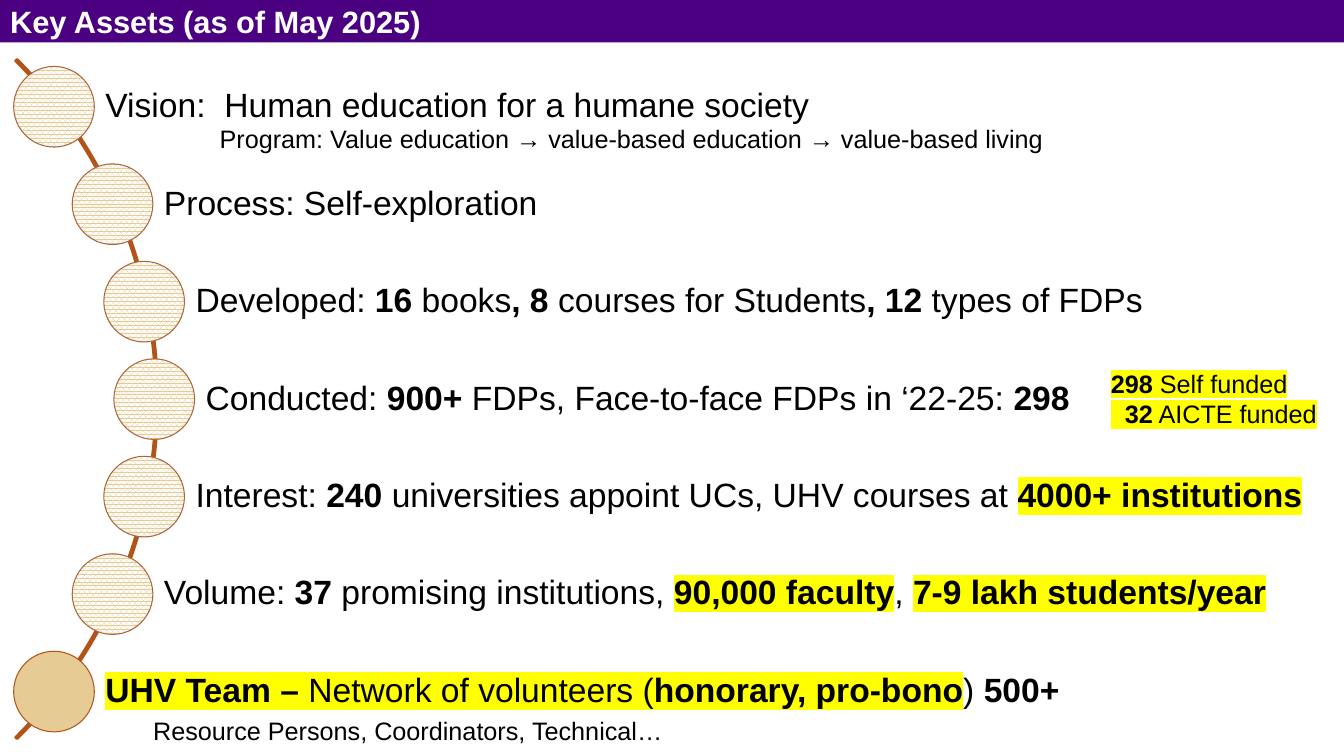
from math import sqrt

from lxml.etree import Element
from pptx import Presentation
from pptx.dml.color import RGBColor
from pptx.enum.dml import MSO_PATTERN
from pptx.enum.shapes import MSO_SHAPE
from pptx.enum.text import MSO_ANCHOR, MSO_AUTO_SIZE, PP_ALIGN
from pptx.oxml.ns import qn
from pptx.util import Inches, Pt

INDIGO, WHITE, BLACK = "4B0082", "FFFFFF", "000000"
RUST, BROWN, SAND, YELLOW = "B2541A", "AB6539", "E6CB94", "FFFF00"

# Arc geometry, in inches
ARC_SIZE, ARC_X, ARC_Y = 9.53, -3.2, 3.96
CENTER_RADIUS = 4.73
ROW_PITCH = 0.967
CIRCLE_SIZE = 0.8
ROW_HEIGHT, ROW_RIGHT = 0.64, 13.27

# Each run is (text, style): "b" is bold, "h" is highlighted
ASSETS = [
    [("Vision:  Human education for a humane society", "")],
    [("Process: Self-exploration", "")],
    [("Developed: ", ""), ("16 ", "b"), ("books", ""), (", 8 ", "b"),
     ("courses for Students", ""), (", 12 ", "b"), ("types of FDPs", "")],
    [("Conducted: ", ""), ("900+", "b"),
     (" FDPs, Face-to-face FDPs in ‘22-25: ", ""), ("298", "b")],
    [("Interest: ", ""), ("240 ", "b"),
     ("universities appoint UCs, UHV courses at ", ""),
     ("4000+ institutions", "bh")],
    [("Volume: ", ""), ("37 ", "b"), ("promising institutions, ", ""),
     ("90,000 faculty", "bh"), (", ", ""), ("7-9 lakh students/year", "bh")],
    [("UHV Team – ", "bh"), ("Network of volunteers (", "h"),
     ("honorary, pro-bono", "bh"), (") ", ""), ("500+", "b")],
]

# Each note is (left, top, width, height, paragraphs)
NOTES = [
    (2.08, 1.17, 8.42, 0.4, [[
        ("Program: Value education → value-based education → "
         "value-based living", "")]]),
    (10.92, 3.6, 2.33, 0.71, [
        [("298", "bh"), (" Self funded", "h")],
        [("  32", "bh"), (" AICTE funded", "h")]]),
    (1.42, 7.05, 8.42, 0.4, [[
        ("Resource Persons, Coordinators, Technical…", "")]]),
]


def color(value):
    return RGBColor.from_string(value)


def set_attributes(target, values):
    for name, value in values.items():
        setattr(target, name, value)


def place(shape, left, top, width, height):
    set_attributes(shape, {"left": Inches(left), "top": Inches(top),
                           "width": Inches(width), "height": Inches(height)})


def add_highlight(run, value):
    highlight = Element(qn("a:highlight"))
    highlight.append(Element(qn("a:srgbClr"), val=value))
    run.font._element.find(qn("a:solidFill")).addnext(highlight)


def write_runs(paragraph, runs, size, text_color=BLACK):
    for text, style in runs:
        run = paragraph.add_run()
        run.text = text
        set_attributes(run.font, {"name": "Arial", "size": Pt(size),
                                  "bold": "b" in style})
        run.font.color.rgb = color(text_color)
        if "h" in style:
            add_highlight(run, YELLOW)


def add_title(slide, text):
    title = slide.shapes.title
    place(title, 0, 0, 13.33, 0.42)
    title.fill.solid()
    title.fill.fore_color.rgb = color(INDIGO)
    set_attributes(title.text_frame, {
        "auto_size": MSO_AUTO_SIZE.NONE, "vertical_anchor": MSO_ANCHOR.MIDDLE})
    paragraph = title.text_frame.paragraphs[0]
    paragraph.alignment = PP_ALIGN.LEFT
    write_runs(paragraph, [(text, "b")], 22, WHITE)


def add_outline(slide, kind, box, line_color, line_width):
    shape = slide.shapes.add_shape(kind, *map(Inches, box))
    shape.shadow.inherit = False
    shape.line.color.rgb = color(line_color)
    shape.line.width = Pt(line_width)
    return shape


def add_arc(slide):
    box = (ARC_X - ARC_SIZE / 2, ARC_Y - ARC_SIZE / 2, ARC_SIZE, ARC_SIZE)
    arc = add_outline(slide, MSO_SHAPE.BLOCK_ARC, box, RUST, 2)
    arc.fill.background()
    for index, value in enumerate((189, 27, 0.002)):
        arc.adjustments[index] = value


def add_circle(slide, center_x, center_y, patterned):
    box = (center_x - CIRCLE_SIZE / 2, center_y - CIRCLE_SIZE / 2,
           CIRCLE_SIZE, CIRCLE_SIZE)
    circle = add_outline(slide, MSO_SHAPE.OVAL, box,
                         BROWN if patterned else RUST, 0.75)
    if patterned:
        circle.fill.patterned()
        circle.fill.pattern = MSO_PATTERN.PERCENT_75
        circle.fill.back_color.rgb = color(WHITE)
    else:
        circle.fill.solid()
    circle.fill.fore_color.rgb = color(SAND)


def add_text(slide, box, paragraphs, size, frame_format=None, line_spacing=1.0):
    frame = slide.shapes.add_textbox(*map(Inches, box)).text_frame
    set_attributes(frame, {"word_wrap": True, **(frame_format or {})})
    for index, runs in enumerate(paragraphs):
        paragraph = frame.add_paragraph() if index else frame.paragraphs[0]
        paragraph.line_spacing = line_spacing
        write_runs(paragraph, runs, size)


def add_asset(slide, index, runs):
    # Circle centres lie on the arc at equal vertical steps
    offset = (index - len(ASSETS) // 2) * ROW_PITCH
    center_x = ARC_X + sqrt(CENTER_RADIUS ** 2 - offset ** 2)
    center_y = ARC_Y + offset
    box = (center_x, center_y - ROW_HEIGHT / 2,
           ROW_RIGHT - center_x, ROW_HEIGHT)
    row_format = {"vertical_anchor": MSO_ANCHOR.MIDDLE,
                  "margin_left": Inches(0.51), "margin_right": Inches(0.07),
                  "margin_top": Inches(0.07), "margin_bottom": Inches(0.07)}
    add_text(slide, box, [runs], 24, row_format, 0.9)
    add_circle(slide, center_x, center_y, index < len(ASSETS) - 1)


def main():
    presentation = Presentation()
    presentation.slide_width = Inches(13.33)
    presentation.slide_height = Inches(7.5)
    slide = presentation.slides.add_slide(presentation.slide_layouts[5])

    add_title(slide, "Key Assets (as of May 2025)")

    # Arc with one circle and one line of text per asset
    add_arc(slide)
    for index, runs in enumerate(ASSETS):
        add_asset(slide, index, runs)

    # Smaller notes beside the assets
    for *box, paragraphs in NOTES:
        add_text(slide, box, paragraphs, 18,
                 {"auto_size": MSO_AUTO_SIZE.SHAPE_TO_FIT_TEXT})

    presentation.save("out.pptx")


if __name__ == "__main__":
    main()
